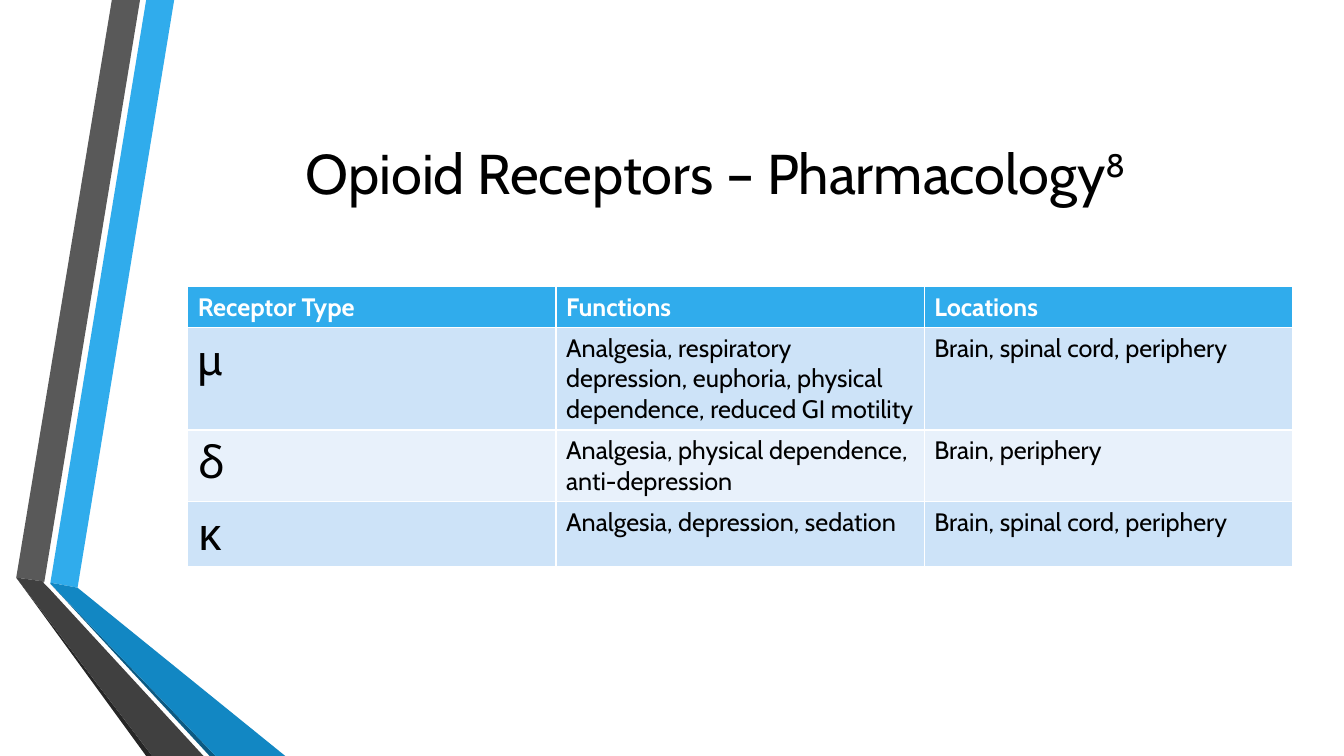
"""Build the opioid receptor pharmacology slide."""
from pptx import Presentation
from pptx.dml.color import RGBColor
from pptx.enum.text import MSO_ANCHOR as Anchor, PP_ALIGN as Align
from pptx.util import Pt

FONT = "Cabin"
BLACK = RGBColor(0x00, 0x00, 0x00)
WHITE = RGBColor(0xFF, 0xFF, 0xFF)
BLUE = RGBColor(0x30, 0xAC, 0xEC)
MID_BLUE = RGBColor(0x12, 0x87, 0xC3)
DEEP_BLUE = RGBColor(0x0C, 0x5A, 0x82)
GREY = RGBColor(0x59, 0x59, 0x59)
DARK_GREY = RGBColor(0x40, 0x40, 0x40)
CHARCOAL = RGBColor(0x26, 0x26, 0x26)
ODD_ROW = RGBColor(0xCD, 0xE3, 0xF8)
EVEN_ROW = RGBColor(0xE8, 0xF1, 0xFB)

RIBBONS = [
    (BLUE, [(36, 416.2), (55.4, 419.8), (124.4, 0), (104.4, 0)]),
    (GREY, [(100, 0), (79.9, 0), (11.6, 412.6), (31.7, 415.4)]),
    (CHARCOAL, [(11.6, 412.6), (104.4, 540), (108.7, 540)]),
    (DEEP_BLUE, [(36, 416.9), (149.8, 540), (154.1, 540)]),
    (MID_BLUE, [(36, 416.2), (36, 416.9), (154.1, 540), (203.8, 540), (55.4, 419.8)]),
    (DARK_GREY, [(11.6, 412.6), (108.7, 540), (145.4, 540), (34.6, 419.8),
                 (31, 416.2), (31.7, 415.4)]),
]

RECEPTORS = [
    ("Receptor Type", "Functions", "Locations"),
    ("µ", "Analgesia, respiratory depression, euphoria, physical dependence, "
          "reduced GI motility", "Brain, spinal cord, periphery"),
    ("δ", "Analgesia, physical dependence, anti-depression", "Brain, periphery"),
    ("κ", "Analgesia, depression, sedation", "Brain, spinal cord, periphery"),
]
ROW_HEIGHTS = [29.2, 73.2, 51.2, 45.4]
COLUMN_WIDTH = 263


def add_span(para, text, size, color, bold=False):
    """Add one formatted run to a paragraph and return it."""
    span = para.add_run()
    span.text = text
    span.font.name = FONT
    span.font.size = Pt(size)
    span.font.bold = bold
    span.font.color.rgb = color
    return span


def add_ribbon(page, color, corners):
    """Draw one filled ribbon face through its corners."""
    start, *others = [(Pt(x), Pt(y)) for x, y in corners]
    builder = page.shapes.build_freeform(*start)
    builder.add_line_segments(others, close=True)
    ribbon = builder.convert_to_shape()
    ribbon.shadow.inherit = False
    ribbon.fill.solid()
    ribbon.fill.fore_color.rgb = color
    ribbon.line.fill.background()


def add_title(page):
    """Place the title with its superscript reference number."""
    title = page.shapes.title
    title.left, title.top, title.width, title.height = Pt(116.6), Pt(54), Pt(789), Pt(138)
    frame = title.text_frame
    frame.word_wrap = True
    frame.vertical_anchor = Anchor.MIDDLE
    para = frame.paragraphs[0]
    para.alignment = Align.CENTER
    add_span(para, "Opioid Receptors – Pharmacology", 40, BLACK)
    reference = add_span(para, "8", 40, BLACK)
    reference.font._element.set("baseline", "30000")


def add_receptor_table(page):
    """Add the receptor table with a header and alternating row fills."""
    column_count = len(RECEPTORS[0])
    table = page.shapes.add_table(
        len(RECEPTORS), column_count, Pt(134.2), Pt(204.8),
        Pt(COLUMN_WIDTH * column_count), Pt(sum(ROW_HEIGHTS))).table
    for column in table.columns:
        column.width = Pt(COLUMN_WIDTH)
    for r, (height, texts) in enumerate(zip(ROW_HEIGHTS, RECEPTORS)):
        table.rows[r].height = Pt(height)
        header = r == 0
        fill = BLUE if header else ODD_ROW if r % 2 else EVEN_ROW
        for c, text in enumerate(texts):
            cell = table.cell(r, c)
            cell.fill.solid()
            cell.fill.fore_color.rgb = fill
            size = 32 if c == 0 and not header else 18
            add_span(cell.text_frame.paragraphs[0], text, size,
                     WHITE if header else BLACK, header)


def main():
    """Assemble and save the deck."""
    deck = Presentation()
    deck.slide_width, deck.slide_height = Pt(960), Pt(540)
    page = deck.slides.add_slide(deck.slide_layouts[5])
    for color, corners in RIBBONS:
        add_ribbon(page, color, corners)
    add_title(page)
    add_receptor_table(page)
    deck.save("out.pptx")


if __name__ == "__main__":
    main()
